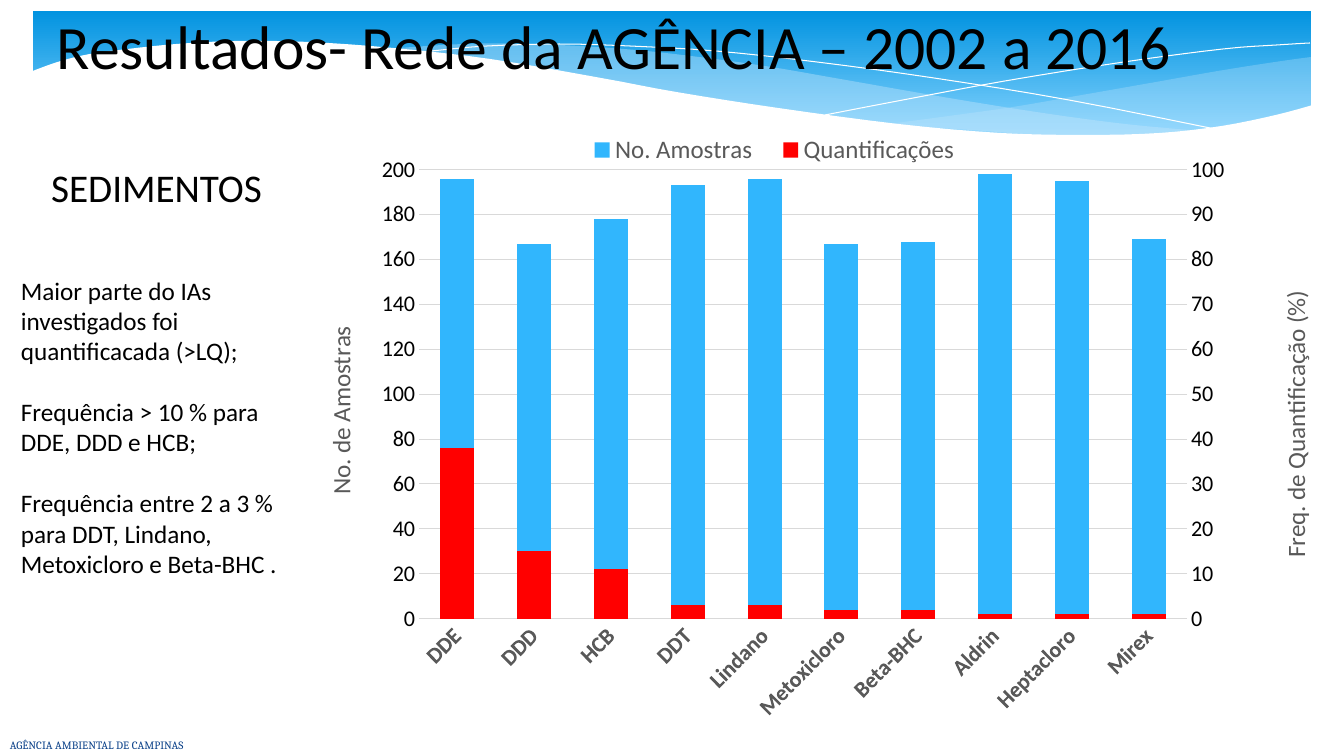
"""Builds the slide on pesticide quantification in sediments, 2002 to 2016."""
import copy

import lxml.etree
import pptx
import pptx.chart.axis
import pptx.chart.data
import pptx.dml.color
import pptx.enum.chart
import pptx.enum.shapes
import pptx.enum.text
import pptx.oxml.ns
import pptx.util

PX = 914400 / 100.8
COLORS = {
    "black": "000000", "white": "FFFFFF", "sky_top": "0293E0", "sky_low": "83D3FE",
    "veil": "C6E7FC", "agency": "073E87", "samples": "31B6FD", "found": "FF0000",
    "label": "595959", "grid": "D9D9D9",
}

COMPOUNDS = [
    ("DDE", 196, 38), ("DDD", 167, 15), ("HCB", 178, 11), ("DDT", 193, 3),
    ("Lindano", 196, 3), ("Metoxicloro", 167, 2), ("Beta-BHC", 168, 2),
    ("Aldrin", 198, 1), ("Heptacloro", 195, 1), ("Mirex", 169, 1),
]
SERIES = [("No. Amostras", "samples"), ("Quantificações", "found")]
SAMPLES_TITLE, FREQUENCY_TITLE = "No. de Amostras", "Freq. de Quantificação (%)"
FINDINGS = [
    "Maior parte do IAs investigados foi quantificacada (>LQ);",
    "Frequência > 10 % para DDE, DDD e HCB;",
    "Frequência entre 2 a 3 % para DDT, Lindano, Metoxicloro e Beta-BHC .",
]
TEXTS = [
    (["AGÊNCIA AMBIENTAL DE CAMPINAS"], (0, 725, 556, 40), 8, "Cambria", "agency", "MIDDLE", "LEFT"),
    (["Resultados- Rede da AGÊNCIA – 2002 a 2016"], (47, -28, 1159, 146), 44, "Calibri", "black", "MIDDLE", "LEFT"),
    (["SEDIMENTOS"], (11, 158, 291, 57), 28, "Calibri", "black", "TOP", "CENTER"),
    (FINDINGS, (11, 270, 279, 407), 18, "Calibri", "black", "TOP", "LEFT"),
]

BANNER = (33, 11, 1278, 137)
RIGHT_VEIL = [
    [(1311, 57), (1275, 62), (1218, 71), (1156, 82), (1082, 95), (1013, 107), (949, 116), (889, 124)],
    [(889, 124), (948, 130), (1017, 134), (1079, 136), (1135, 135), (1184, 132), (1228, 126),
     (1267, 118), (1311, 106)],
]
LONG_VEIL = [
    [(1200, 131), (1125, 124), (1043, 113), (949, 98), (846, 80), (765, 66), (691, 56), (624, 49),
     (536, 44), (463, 44), (385, 49)],
    [(385, 49), (460, 57), (543, 69), (604, 80), (711, 99), (808, 114), (894, 125), (971, 130),
     (1040, 135), (1113, 137), (1177, 134), (1200, 131)],
]
FALLING_LINE = [[(415, 53), (441, 50), (487, 46), (559, 44), (630, 46), (716, 51), (817, 62),
                 (934, 78), (1069, 100), (1220, 130)]]
RISING_LINE = [[(825, 115), (903, 100), (1005, 81), (1124, 62), (1223, 49), (1277, 45), (1310, 43)]]
WHITE_WAVE = [
    [(1313, 105), (1276, 115), (1222, 126), (1160, 133), (1087, 135), (1000, 133), (898, 124),
     (778, 108), (676, 92), (601, 78), (490, 59), (393, 48), (308, 42), (237, 41), (177, 44),
     (128, 49), (90, 54), (61, 61), (38, 69), (31, 72)],
    [(31, 188), (1313, 188)],
]
CURVES = [
    (RIGHT_VEIL, "veil", 29), (LONG_VEIL, "veil", 40),
    (FALLING_LINE, None, None), (RISING_LINE, None, None), (WHITE_WAVE, "white", 100),
]

CHART = (300, 107, 1019, 647)
PLOT = (420, 170, 778, 449)
LEGEND = (575, 133, 410, 34)
SAMPLES_TITLE_AT, FREQUENCY_TITLE_AT = (319, 320), (1285, 283)


def rgb(name):
    return pptx.dml.color.RGBColor.from_string(COLORS[name])


def emu(*lengths):
    return [pptx.util.Emu(round(length * PX)) for length in lengths]


def style(font, size, color, face="Calibri", bold=False):
    font.size, font.name, font.bold = pptx.util.Pt(size), face, bold
    font.color.rgb = rgb(color)


def smooth(points, steps=4):
    """Passes a Catmull-Rom curve through the points."""
    ends = [points[0], *points, points[-1]]
    curve = [points[0]]
    for a, b, c, d in zip(ends, ends[1:], ends[2:], ends[3:]):
        for t in (step / steps for step in range(1, steps + 1)):
            curve.append(tuple(
                (2 * q + (r - p) * t + (2 * p - 5 * q + 4 * r - s) * t ** 2
                 + (3 * q - p - 3 * r + s) * t ** 3) / 2
                for p, q, r, s in zip(a, b, c, d)))
    return curve


def add_curve(slide, edges, fill, opacity):
    outline = [emu(*point) for edge in edges for point in smooth(edge)]
    builder = slide.shapes.build_freeform(*outline[0], scale=1.0)
    builder.add_line_segments(outline[1:], close=fill is not None)
    curve = builder.convert_to_shape()
    curve.shadow.inherit = False
    if fill is None:
        curve.fill.background()
        curve.line.color.rgb = rgb("white")
        curve.line.width = 0
        return
    curve.fill.solid()
    curve.fill.fore_color.rgb = rgb(fill)
    curve.line.fill.background()
    color = curve.fill._xPr.find(".//" + pptx.oxml.ns.qn("a:srgbClr"))
    lxml.etree.SubElement(color, pptx.oxml.ns.qn("a:alpha"), val=str(opacity * 1000))


def add_banner(slide):
    banner = slide.shapes.add_shape(pptx.enum.shapes.MSO_SHAPE.ROUNDED_RECTANGLE, *emu(*BANNER))
    banner.adjustments[0] = 0
    banner.shadow.inherit = False
    banner.line.fill.background()
    banner.fill.gradient()
    banner.fill.gradient_angle = 270
    for stop, position, color in zip(banner.fill.gradient_stops, (0, 0.9), ("sky_top", "sky_low")):
        stop.position, stop.color.rgb = position, rgb(color)


def add_text(slide, lines, box, size, face, color, anchor, align):
    frame = slide.shapes.add_textbox(*emu(*box)).text_frame
    frame.word_wrap = True
    frame.vertical_anchor = getattr(pptx.enum.text.MSO_ANCHOR, anchor)
    for index, line in enumerate(lines):
        paragraph = frame.add_paragraph() if index else frame.paragraphs[0]
        paragraph.text = line
        paragraph.alignment = getattr(pptx.enum.text.PP_ALIGN, align)
        if index:
            paragraph.space_before = pptx.util.Pt(22)
        style(paragraph.font, size, color, face)


def place(part, index, box, inner=False):
    """Pins a chart part to a place given in slide px."""
    qn = pptx.oxml.ns.qn
    for old in part.findall(qn("c:layout")):
        part.remove(old)
    layout = lxml.etree.Element(qn("c:layout"))
    part.insert(index, layout)
    manual = lxml.etree.SubElement(layout, qn("c:manualLayout"))
    settings = [("layoutTarget", "inner")] if inner else []
    settings += [("xMode", "edge"), ("yMode", "edge")]
    left, top, width, height = CHART
    fractions = zip("xywh", box, (left, top, 0, 0), (width, height, width, height))
    settings += [(key, f"{(value - start) / span:.3f}") for key, value, start, span in fractions]
    for key, value in settings:
        lxml.etree.SubElement(manual, qn("c:" + key), val=value)


def title_axis(axis, text, at):
    frame = axis.axis_title.text_frame
    frame.text = text
    style(frame.paragraphs[0].font, 18, "label")
    frame._txBody.bodyPr.set("rot", "-5400000")
    place(axis.axis_title._element, 1, at)


def split_axes(chart):
    """Moves the second series to an axis on the right and returns that axis."""
    qn = pptx.oxml.ns.qn
    plot = chart._chartSpace.chart.plotArea
    bars, category, value = (plot.find(qn("c:" + tag)) for tag in ("barChart", "catAx", "valAx"))
    right_bars, right_category, right_value = (copy.deepcopy(part) for part in (bars, category, value))
    bars.remove(bars.findall(qn("c:ser"))[1])
    right_bars.remove(right_bars.findall(qn("c:ser"))[0])
    bars.addnext(right_bars)
    value.addnext(right_value)
    right_value.addnext(right_category)
    ids = ("50010", "50020")
    for node, number in zip(right_bars.findall(qn("c:axId")), ids):
        node.set("val", number)
    for axis, own, other in ((right_category, *ids), (right_value, *ids[::-1])):
        axis.find(qn("c:axId")).set("val", own)
        axis.find(qn("c:crossAx")).set("val", other)
    right_category.find(qn("c:delete")).set("val", "1")
    right_value.find(qn("c:axPos")).set("val", "r")
    right_value.find(qn("c:crosses")).set("val", "max")
    return pptx.chart.axis.ValueAxis(right_value)


def add_frequency_chart(slide):
    names, *columns = zip(*COMPOUNDS)
    data = pptx.chart.data.CategoryChartData()
    data.categories = names
    for (name, _), column in zip(SERIES, columns):
        data.add_series(name, column)
    kinds = pptx.enum.chart
    chart = slide.shapes.add_chart(kinds.XL_CHART_TYPE.COLUMN_CLUSTERED, *emu(*CHART), data).chart
    chart.has_title = False
    style(chart.font, 10, "black")
    bars = chart.plots[0]
    bars.gap_width, bars.overlap, bars.vary_by_categories = 126, -27, False
    for series, (_, color) in zip(bars.series, SERIES):
        series.format.fill.solid()
        series.format.fill.fore_color.rgb = rgb(color)
    compounds, samples = chart.category_axis, chart.value_axis
    compounds.major_tick_mark = samples.major_tick_mark = kinds.XL_TICK_MARK.NONE
    style(compounds.tick_labels.font, 16, "label", bold=True)
    compounds._element.find(".//" + pptx.oxml.ns.qn("a:bodyPr")).set("rot", "-2700000")
    style(samples.tick_labels.font, 16, "black")
    samples.minimum_scale, samples.maximum_scale, samples.major_unit = 0, 200, 20
    samples.format.line.fill.background()
    for line in (compounds.format.line, samples.major_gridlines.format.line):
        line.color.rgb, line.width = rgb("grid"), pptx.util.Pt(0.75)
    title_axis(samples, SAMPLES_TITLE, SAMPLES_TITLE_AT)
    frequency = split_axes(chart)
    frequency.has_major_gridlines = False
    frequency.maximum_scale, frequency.major_unit = 100, 10
    title_axis(frequency, FREQUENCY_TITLE, FREQUENCY_TITLE_AT)
    chart.has_legend = True
    chart.legend.position = kinds.XL_LEGEND_POSITION.RIGHT
    chart.legend.include_in_layout = False
    style(chart.legend.font, 18, "label")
    place(chart.legend._element, 1, LEGEND)
    place(chart._chartSpace.chart.plotArea, 0, PLOT, inner=True)


def main():
    deck = pptx.Presentation()
    deck.slide_width, deck.slide_height = emu(1344, 756)
    slide = deck.slides.add_slide(deck.slide_layouts[6])
    add_banner(slide)
    for curve in CURVES:
        add_curve(slide, *curve)
    add_frequency_chart(slide)
    for text in TEXTS:
        add_text(slide, *text)
    deck.save("out.pptx")


if __name__ == "__main__":
    main()
